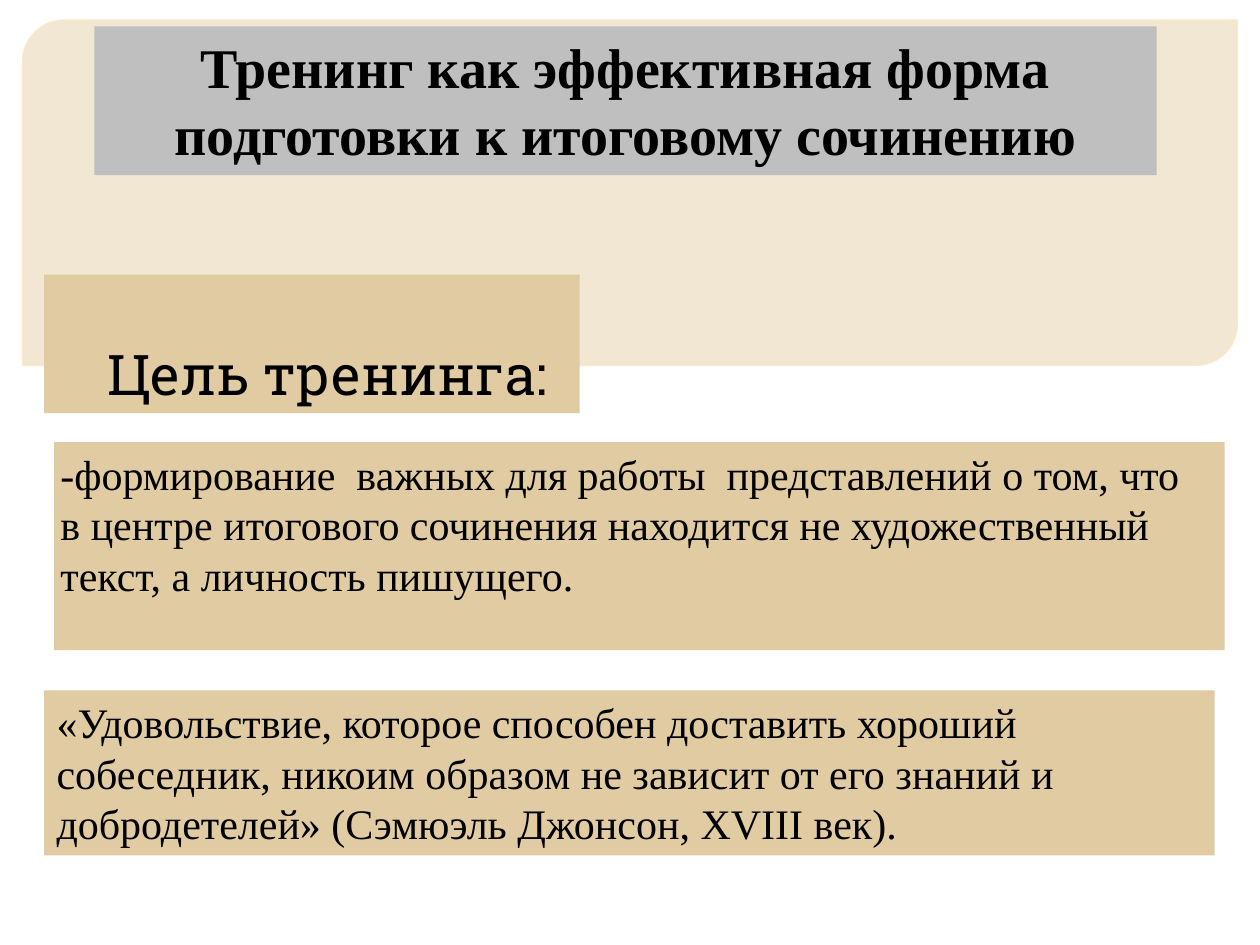
from lxml.etree import SubElement
from pptx import Presentation
from pptx.dml.color import RGBColor
from pptx.enum.shapes import MSO_SHAPE
from pptx.enum.text import MSO_ANCHOR, PP_ALIGN
from pptx.oxml.ns import qn
from pptx.util import Inches, Pt

BLACK = RGBColor(0x00, 0x00, 0x00)
GREY = RGBColor(0xBF, 0xBF, 0xBF)
SAND = RGBColor(0xE0, 0xCB, 0xA3)
PANEL_FILL = RGBColor(0xEB, 0xDB, 0xBC)
PANEL_LINE = RGBColor(0xFB, 0xE8, 0xC6)
SERIF, SLAB = "Times New Roman", "Roboto Slab"

# Content: box and insets (left, top, right, bottom) in inches
BLOCKS = [
    dict(lines=["Цель тренинга:"], box=(0.35, 2.18, 4.25, 1.1),
         insets=(0.05, 0.05, 0.25, 0.05), fill=SAND, font=SLAB, size=32,
         bold=False, align=PP_ALIGN.RIGHT, anchor=MSO_ANCHOR.BOTTOM),
    dict(lines=["-формирование  важных для работы  представлений о том, что "
                "в центре итогового сочинения находится не художественный "
                "текст, а личность пишущего."], box=(0.43, 3.51, 9.29, 1.65),
         insets=(0.05, 0.05, 0.27, 0.05), fill=SAND, font=SERIF, size=24,
         bold=False, align=PP_ALIGN.LEFT, anchor=MSO_ANCHOR.TOP),
    dict(lines=["«Удовольствие, которое способен доставить хороший "
                "собеседник, никоим образом не зависит от его знаний и "
                "добродетелей» (Сэмюэль Джонсон, XVIII век)."],
         box=(0.35, 5.48, 9.29, 1.31),
         insets=(0.1, 0.05, 0.1, 0.05), fill=SAND, font=SERIF, size=24,
         bold=False, align=PP_ALIGN.LEFT, anchor=MSO_ANCHOR.TOP),
    dict(lines=["Тренинг как эффективная форма",
                "подготовки к итоговому сочинению"],
         box=(0.75, 0.21, 8.43, 1.18),
         insets=(0.1, 0.05, 0.1, 0.05), fill=GREY, font=SERIF, size=32,
         bold=True, align=PP_ALIGN.CENTER, anchor=MSO_ANCHOR.TOP),
]


def set_opacity(fill_format_element, percent):
    color = fill_format_element.find(qn("a:solidFill")).find(qn("a:srgbClr"))
    SubElement(color, qn("a:alpha")).set("val", str(percent * 1000))


def add_panel(page):
    panel = page.shapes.add_shape(MSO_SHAPE.ROUND_2_DIAG_RECTANGLE,
                                  *map(Inches, (0.18, 0.16, 9.64, 2.74)))
    panel.shadow.inherit = False
    panel.adjustments[0], panel.adjustments[1] = 0.12, 0
    panel.fill.solid()
    panel.fill.fore_color.rgb = PANEL_FILL
    panel.line.color.rgb = PANEL_LINE
    panel.line.width = Pt(0.87)
    properties = panel.element.spPr
    set_opacity(properties, 65)
    set_opacity(properties.find(qn("a:ln")), 88)


def add_block(page, block):
    box = page.shapes.add_textbox(*map(Inches, block["box"]))
    box.fill.solid()
    box.fill.fore_color.rgb = block["fill"]
    frame = box.text_frame
    frame.word_wrap = True
    frame.vertical_anchor = block["anchor"]
    (frame.margin_left, frame.margin_top,
     frame.margin_right, frame.margin_bottom) = map(Inches, block["insets"])
    frame.text = "\n".join(block["lines"])
    for para in frame.paragraphs:
        para.alignment = block["align"]
        for span in para.runs:
            span.font.name = block["font"]
            span.font.size = Pt(block["size"])
            span.font.bold = block["bold"]
            span.font.color.rgb = BLACK


def main():
    deck = Presentation()
    deck.slide_width, deck.slide_height = Inches(10), Inches(7.5)
    page = deck.slides.add_slide(deck.slide_layouts[6])
    # Translucent backdrop, then the text blocks over it
    add_panel(page)
    for block in BLOCKS:
        add_block(page, block)
    deck.save("out.pptx")


if __name__ == "__main__":
    main()
